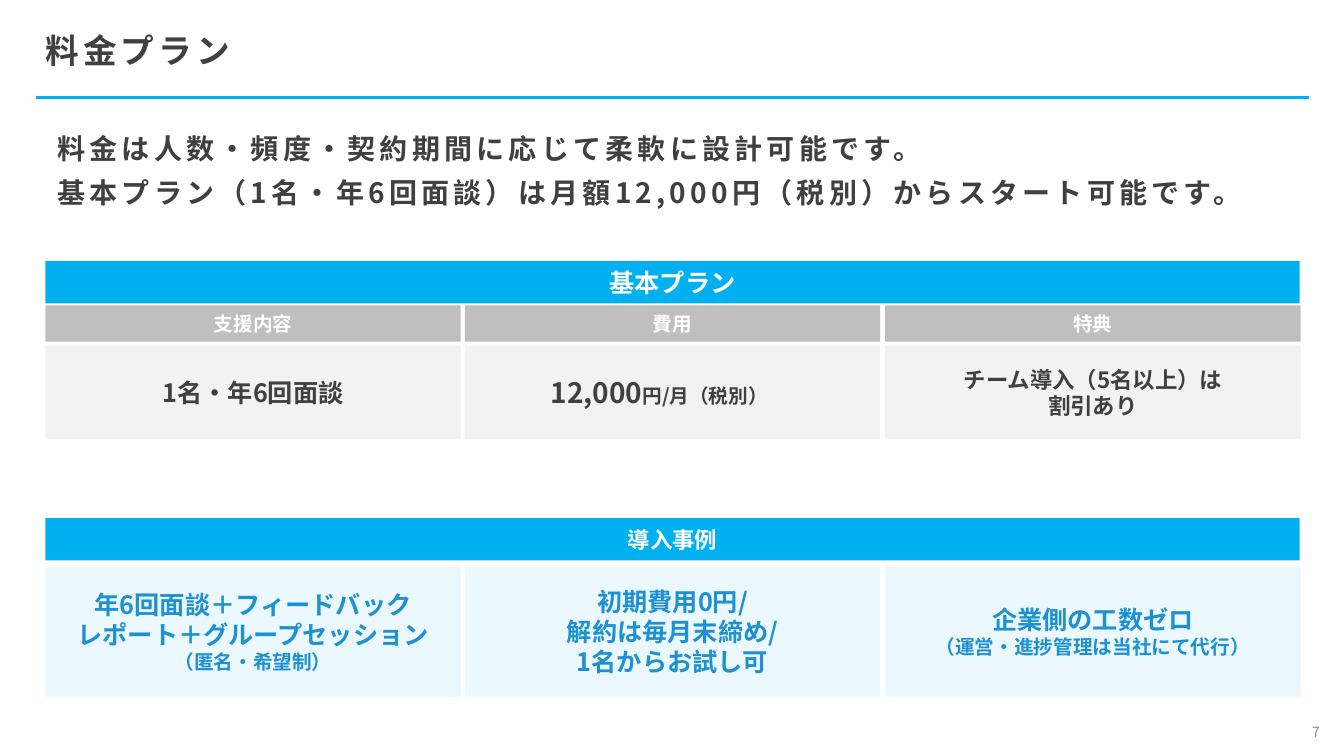
from dataclasses import dataclass

from lxml.etree import SubElement
from pptx import Presentation
from pptx.dml.color import RGBColor
from pptx.enum.shapes import MSO_CONNECTOR, MSO_SHAPE
from pptx.enum.text import MSO_ANCHOR, MSO_AUTO_SIZE, PP_ALIGN
from pptx.oxml.ns import qn
from pptx.util import Emu, Pt

EMU_PER_PX = 9144  # 100 px to the inch


@dataclass(frozen=True)
class Theme:
    font: str = "Noto Sans CJK JP"
    accent: str = "00B0F0"
    accent_text: str = "1D91D1"
    text: str = "404040"
    white: str = "FFFFFF"
    header_fill: str = "BFBFBF"
    cell_fill: str = "F2F2F2"
    page_text: str = "8C8C8C"
    title: int = 24
    price: int = 20
    lead: int = 20
    body: int = 18
    medium: int = 16
    small: int = 14
    page: int = 10
    tracking: int = 300
    tint: int = 8


THEME = Theme()
LEFT, BAND_WIDTH, COLUMN_WIDTH = 45, 1244, 412

PLAN = [
    ("支援内容", [([("1名・年6回面談", THEME.body)])], 10),
    ("費用", [[("12,000", THEME.price), ("円/月（税別）", THEME.small)]], 36),
    ("特典", [[("チーム導入（5名以上）は", THEME.medium)],
            [("割引あり", THEME.medium)]], 10),
]
CASES = [
    [[("年6回面談＋フィードバック", THEME.body)],
     [("レポート＋グループセッション", THEME.body)],
     [("（匿名・希望制）", THEME.small)]],
    [[("初期費用0円/", THEME.body)],
     [("解約は毎月末締め/", THEME.body)],
     [("1名からお試し可", THEME.body)]],
    [[("企業側の工数ゼロ", THEME.body)],
     [("（運営・進捗管理は当社にて代行）", THEME.small)]],
]


def px(n):
    return Emu(n * EMU_PER_PX)


def box(left, top, width, height):
    return px(left), px(top), px(width), px(height)


def column_left(i):
    return LEFT + i * 833 // 2


def write(tf, lines, color, bold=True, align=PP_ALIGN.CENTER, tracking=0,
          line_spacing=None, space_before=None, anchor=MSO_ANCHOR.MIDDLE):
    """Fill a text frame; each line is a list of (text, size) runs."""
    tf.word_wrap = True
    tf.auto_size = MSO_AUTO_SIZE.NONE
    tf.vertical_anchor = anchor
    for i, line in enumerate(lines):
        p = tf.add_paragraph() if i else tf.paragraphs[0]
        p.alignment = align
        p.line_spacing = line_spacing
        p.space_before = space_before
        font = p.font
        font.size, font.bold = Pt(line[0][1]), bold
        font.color.rgb = RGBColor.from_string(color)
        font.name = THEME.font
        props = p._p.pPr.find(qn("a:defRPr"))
        SubElement(props, qn("a:ea"), typeface=THEME.font)
        if tracking:
            props.set("spc", str(tracking))
        for text, size in line:
            r = p.add_run()
            r.text = text
            if size != line[0][1]:
                r.font.size = Pt(size)


def add_title(slide, text):
    sp = slide.shapes.title
    sp.left, sp.top, sp.width, sp.height = box(35, 21, 1252, 63)
    write(sp.text_frame, [[(text, THEME.title)]], THEME.text,
          align=PP_ALIGN.LEFT, tracking=THEME.tracking, line_spacing=0.9)


def add_rule(slide):
    line = slide.shapes.add_connector(
        MSO_CONNECTOR.STRAIGHT, px(36), px(97), px(1298), px(97))
    line.line.color.rgb = RGBColor.from_string(THEME.accent)
    line.line.width = Pt(2)
    SubElement(line._element.spPr, qn("a:effectLst"))


def add_text(slide, bounds, lines, color, **style):
    sp = slide.shapes.add_textbox(*box(*bounds))
    write(sp.text_frame, lines, color, **style)


def add_cell(slide, bounds, fill, lines, color, alpha=100, right_inset=10):
    """Add a filled rectangle; alpha is its opacity in percent."""
    sp = slide.shapes.add_shape(MSO_SHAPE.RECTANGLE, *box(*bounds))
    sp.shadow.inherit = False
    sp.line.fill.background()
    sp.fill.solid()
    sp.fill.fore_color.rgb = RGBColor.from_string(fill)
    if alpha < 100:
        clr = sp._element.spPr.find(qn("a:solidFill")).find(qn("a:srgbClr"))
        SubElement(clr, qn("a:alpha"), val=str(alpha * 1000))
    sp.text_frame.margin_right = px(right_inset)
    write(sp.text_frame, lines, color)


def add_band(slide, top, text, size):
    add_cell(slide, (LEFT, top, BAND_WIDTH, 42), THEME.accent,
             [[(text, size)]], THEME.white)


def main():
    prs = Presentation()
    prs.slide_width, prs.slide_height = px(1333), px(750)
    slide = prs.slides.add_slide(prs.slide_layouts[5])

    add_title(slide, "料金プラン")
    add_rule(slide)
    lead = ["料金は人数・頻度・契約期間に応じて柔軟に設計可能です。",
            "基本プラン（1名・年6回面談）は月額12,000円（税別）からスタート可能です。"]
    add_text(slide, (47, 129, 1240, 91), [[(t, THEME.lead)] for t in lead],
             THEME.text, align=PP_ALIGN.LEFT, tracking=THEME.tracking,
             line_spacing=0.9, space_before=Pt(10), anchor=MSO_ANCHOR.TOP)

    add_band(slide, 259, "基本プラン", THEME.body)
    for i, (header, lines, right_inset) in enumerate(PLAN):
        left = column_left(i)
        add_cell(slide, (left, 303, COLUMN_WIDTH, 36), THEME.header_fill,
                 [[(header, THEME.small)]], THEME.white)
        add_cell(slide, (left, 343, COLUMN_WIDTH, 93), THEME.cell_fill,
                 lines, THEME.text, right_inset=right_inset)

    add_band(slide, 514, "導入事例", THEME.medium)
    for i, lines in enumerate(CASES):
        add_cell(slide, (column_left(i), 562, COLUMN_WIDTH, 129), THEME.accent,
                 lines, THEME.accent_text, alpha=THEME.tint)

    add_text(slide, (1019, 713, 300, 27), [[("7", THEME.page)]],
             THEME.page_text, bold=False, align=PP_ALIGN.RIGHT)
    prs.save("out.pptx")


if __name__ == "__main__":
    main()
